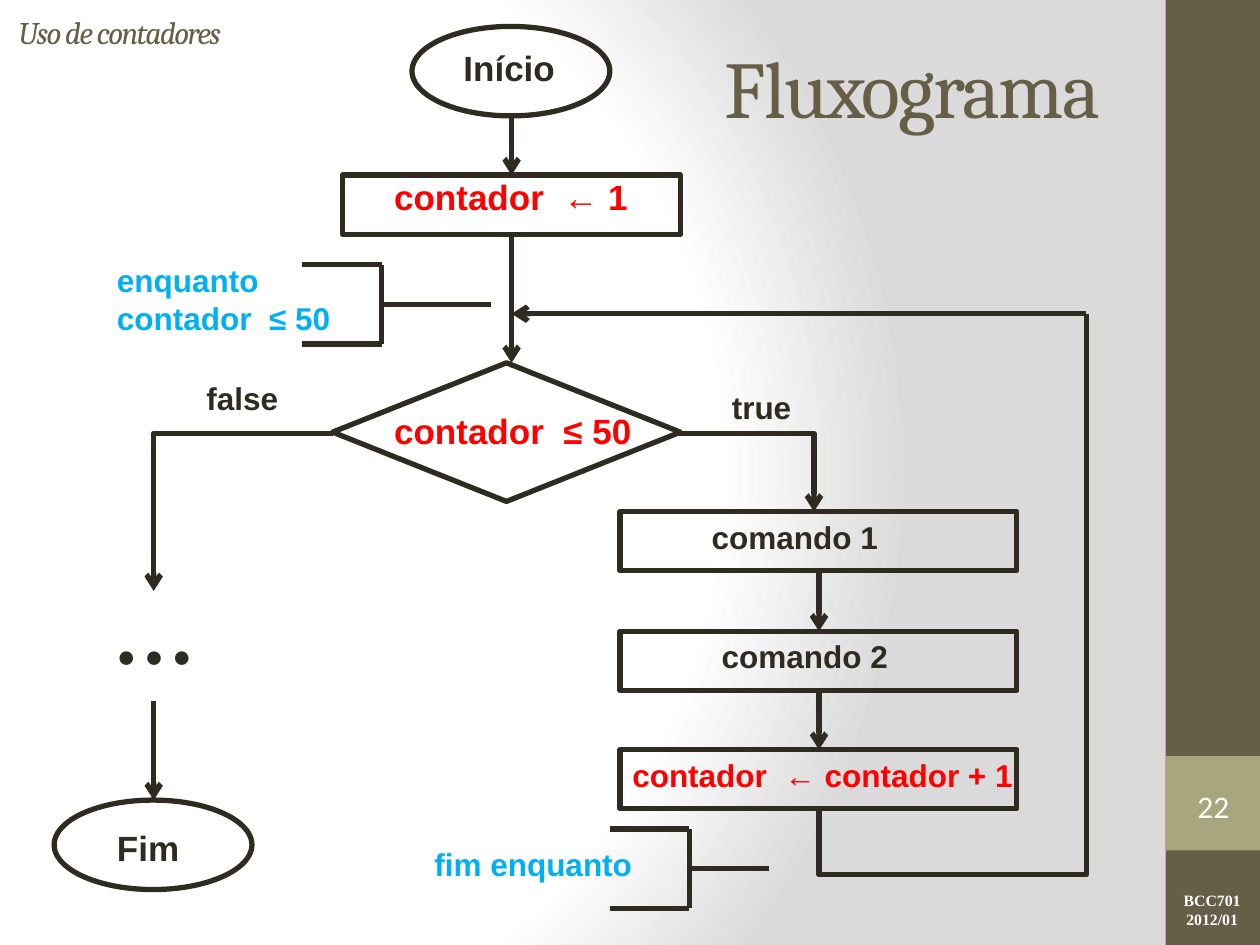
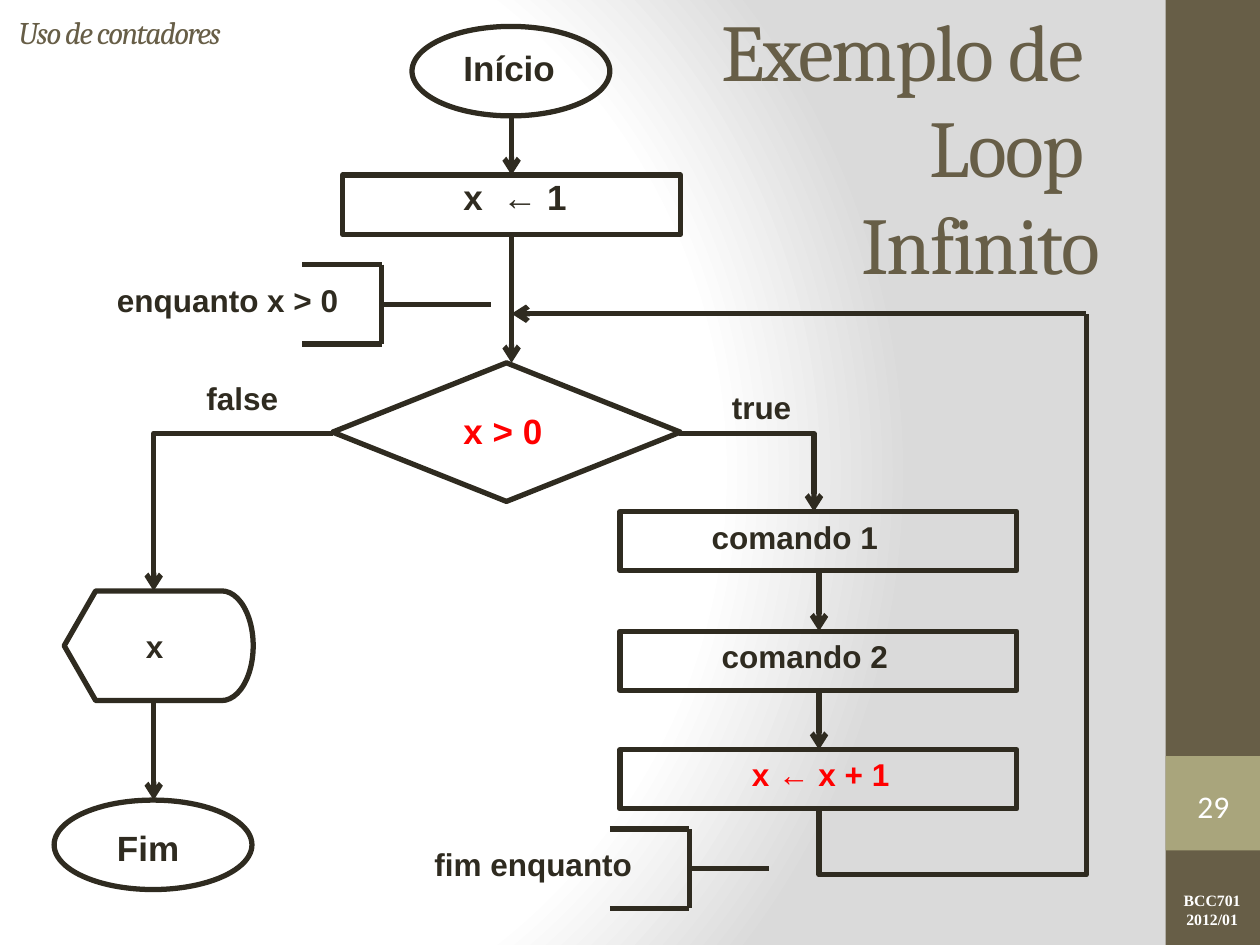
from lxml.etree import SubElement
from pptx import Presentation
from pptx.dml.color import RGBColor
from pptx.enum.shapes import MSO_CONNECTOR, MSO_SHAPE
from pptx.enum.text import MSO_ANCHOR, MSO_AUTO_SIZE, PP_ALIGN
from pptx.oxml.ns import qn
from pptx.util import Inches, Pt

# Shared colours
OLIVE = RGBColor(0x67, 0x5E, 0x47)
SAGE = RGBColor(0xA9, 0xA5, 0x7C)
INK = RGBColor(0x2F, 0x2B, 0x20)
RED = RGBColor(0xFF, 0x00, 0x00)
BLUE = RGBColor(0x00, 0xB0, 0xF0)
WHITE = RGBColor(0xFF, 0xFF, 0xFF)

BACKGROUND_STOPS = [(0, "FFFFFF"), (75, "FFFFFF"), (100, "DADADA")]
BACKGROUND_FOCUS = {"l": 20, "t": 50, "r": 100, "b": 50}

# Flowchart axes and the rows of the loop body
MAIN_X, FALSE_X, BODY_X, RETURN_X = 4.06, 1.22, 6.5, 8.62
DECISION_Y, RETURN_Y = 3.44, 2.49
BODY_TOPS = [4.06, 5.01, 5.95]
BOX_HEIGHT = 0.47


def write_text(frame, text, size=18, font="Arial", color=INK, bold=False,
               italic=False, align=PP_ALIGN.LEFT, anchor=MSO_ANCHOR.TOP,
               spacing=None):
    """Fill a text frame; newlines part paragraphs, \\v breaks a line."""
    frame.text = text
    frame.word_wrap = True
    frame.auto_size = MSO_AUTO_SIZE.NONE
    frame.vertical_anchor = anchor
    for para in frame.paragraphs:
        para.alignment = align
        for span in para.runs:
            span.font.size = Pt(size)
            span.font.name = font
            span.font.color.rgb = color
            span.font.bold = bold
            span.font.italic = italic
            if spacing is not None:
                span.font._element.set("spc", str(int(spacing * 100)))


def add_label(page, text, left, top, width, height=0.4, **text_format):
    box = page.shapes.add_textbox(
        Inches(left), Inches(top), Inches(width), Inches(height))
    write_text(box.text_frame, text, **text_format)
    return box


def add_bold(page, text, left, top, width, **text_format):
    return add_label(page, text, left, top, width, bold=True, **text_format)


def add_symbol(page, kind, left, top, width, height, fill=None):
    """Add a filled band, or an outlined flowchart symbol without fill."""
    symbol = page.shapes.add_shape(
        kind, Inches(left), Inches(top), Inches(width), Inches(height))
    symbol.shadow.inherit = False
    if fill is None:
        symbol.fill.background()
        symbol.line.color.rgb = INK
        symbol.line.width = Pt(3)
    else:
        symbol.fill.solid()
        symbol.fill.fore_color.rgb = fill
        symbol.line.fill.background()
    return symbol


def add_link(page, start, end, arrow=False, kind=MSO_CONNECTOR.STRAIGHT):
    link = page.shapes.add_connector(
        kind, *[Inches(value) for value in (*start, *end)])
    link.line.color.rgb = INK
    link.line.width = Pt(3)
    properties = link._element.spPr
    if arrow:
        SubElement(properties.find(qn("a:ln")), qn("a:tailEnd"), type="arrow")
    SubElement(properties, qn("a:effectLst"))
    return link


def add_elbow(page, start, end, arrow=False, bend=None, turned=False):
    """Add a bent link: one corner without bend, else two corners."""
    if turned:
        # Place the ends as they lie before a quarter turn clockwise
        middle_x, middle_y = (start[0] + end[0]) / 2, (start[1] + end[1]) / 2
        start, end = [(middle_x + y - middle_y, middle_y - x + middle_x)
                      for x, y in (start, end)]
    link = add_link(page, start, end, arrow, MSO_CONNECTOR.ELBOW)
    properties = link._element.spPr
    geometry = properties.find(qn("a:prstGeom"))
    if bend is None:
        geometry.set("prst", "bentConnector2")
    else:
        SubElement(geometry.find(qn("a:avLst")), qn("a:gd"),
                   name="adj1", fmla=f"val {round(bend * 100000)}")
    if turned:
        properties.find(qn("a:xfrm")).set("rot", "5400000")


def add_bracket(page, right, top, stem):
    """Add a right-hand bracket with a stem from its middle."""
    left, bottom, middle = right - 0.63, top + 0.63, top + 0.315
    add_link(page, (left, top), (right, top))
    add_link(page, (right, top), (right, bottom))
    add_link(page, (left, bottom), (right, bottom))
    add_link(page, (right, middle), (right + stem, middle))


def paint_background(master):
    fill = master.background.fill
    fill.gradient()
    gradient = fill._fill._gradFill
    for child in list(gradient):
        gradient.remove(child)
    stops = SubElement(gradient, qn("a:gsLst"))
    for position, color in BACKGROUND_STOPS:
        stop = SubElement(stops, qn("a:gs"), pos=str(position * 1000))
        SubElement(stop, qn("a:srgbClr"), val=color)
    shade = SubElement(gradient, qn("a:path"))
    shade.set("path", "circle")
    SubElement(shade, qn("a:fillToRect"),
               {side: str(part * 1000)
                for side, part in BACKGROUND_FOCUS.items()})


def add_page(deck, title, top, height, number):
    """Add a page with its side band, title, topic, number and footer."""
    page = deck.slides.add_slide(deck.slide_layouts[5])
    add_symbol(page, MSO_SHAPE.RECTANGLE, 9.25, 0, 0.75, 7.5, OLIVE)
    add_symbol(page, MSO_SHAPE.RECTANGLE, 9.25, 6, 0.75, 0.75, SAGE)
    add_bold(page, "BCC701\n2012/01", 9.26, 7.02, 0.72, size=9,
             font="Times New Roman", color=WHITE, align=PP_ALIGN.CENTER)
    heading = page.shapes.title
    heading.left, heading.top = Inches(0.5), Inches(top)
    heading.width, heading.height = Inches(8.33), Inches(height)
    write_text(heading.text_frame, title, size=46, font="Cambria", color=OLIVE,
               align=PP_ALIGN.RIGHT, anchor=MSO_ANCHOR.MIDDLE, spacing=-1)
    add_label(page, "Uso de contadores", 0.05, 0.08, 8.32, 0.34,
              font="Cambria", color=OLIVE, italic=True,
              anchor=MSO_ANCHOR.MIDDLE, spacing=-1)
    add_label(page, number, 9.28, 6.18, 0.7, 0.43, font="Calibri", color=WHITE,
              align=PP_ALIGN.CENTER, anchor=MSO_ANCHOR.MIDDLE)
    return page


def add_loop_chart(page):
    """Draw the symbols, links and labels that both flowcharts share."""
    # Symbols
    for left, top in [(3.27, 0.21), (0.43, 6.35)]:
        add_symbol(page, MSO_SHAPE.OVAL, left, top, 1.57, 0.71)
    add_symbol(page, MSO_SHAPE.RECTANGLE, 2.72, 1.39, 2.68, BOX_HEIGHT)
    add_symbol(page, MSO_SHAPE.DIAMOND, 2.64, 2.88, 2.76, 1.1)
    for top in BODY_TOPS:
        add_symbol(page, MSO_SHAPE.RECTANGLE, 4.92, top, 3.15, BOX_HEIGHT)

    # Straight arrows
    for x, top, bottom in [(MAIN_X, 0.92, 1.39), (MAIN_X, 1.86, 2.88),
                           (FALSE_X, 5.56, 6.35)]:
        add_link(page, (x, top), (x, bottom), arrow=True)
    for above, below in zip(BODY_TOPS, BODY_TOPS[1:]):
        add_link(page, (BODY_X, above + BOX_HEIGHT), (BODY_X, below), arrow=True)

    # Branches and the way back to the test
    add_elbow(page, (5.39, DECISION_Y), (6.46, BODY_TOPS[0]), arrow=True)
    add_elbow(page, (2.64, DECISION_Y), (FALSE_X, 4.69), arrow=True, bend=1)
    add_elbow(page, (BODY_X, 6.43), (RETURN_X, RETURN_Y),
              bend=-0.13, turned=True)
    add_link(page, (RETURN_X, RETURN_Y), (MAIN_X, RETURN_Y), arrow=True)

    # Comment brackets
    add_bracket(page, 3.03, 2.1, 0.87)
    add_bracket(page, 5.47, 6.58, 0.63)

    # Labels
    add_bold(page, "Início", 3.58, 0.32, 1.02, size=20)
    add_bold(page, "Fim", 0.83, 6.51, 0.87, size=20)
    add_bold(page, "true", 5.71, 3.03, 0.87)
    add_bold(page, "false", 1.54, 2.96, 0.87)
    add_bold(page, "comando 1", 5.55, BODY_TOPS[0], 1.81)
    add_bold(page, "comando 2", 5.63, BODY_TOPS[1], 1.73)


def add_counter_page(deck):
    page = add_page(deck, "Fluxograma", 0.3, 0.77, "22")
    add_loop_chart(page)
    add_bold(page, "contador  ← 1", 3.03, 1.34, 2.13, size=20, color=RED)
    add_bold(page, "contador  ≤ 50", 3.03, 3.2, 2.13, size=20, color=RED)
    add_bold(page, "contador  ← contador + 1", 4.92, 5.95, 3.31, color=RED)
    add_bold(page, "enquanto\ncontador  ≤ 50", 0.83, 2.02, 2.13,
             height=0.71, color=BLUE)
    add_bold(page, "fim enquanto", 3.35, 6.66, 2.13, color=BLUE)
    add_label(page, "● ● ●", 0.83, 5, 0.87)


def add_infinite_page(deck):
    page = add_page(deck, "Exemplo de \vLoop \vInfinito", 0.53, 1.25, "29")
    add_loop_chart(page)
    add_bold(page, "x  ← 1", 3.58, 1.34, 1.1, size=20)
    add_bold(page, "x > 0", 3.58, 3.2, 0.87, size=20, color=RED)
    add_bold(page, "x ← x + 1", 5.87, 5.94, 1.34, color=RED)
    add_bold(page, "enquanto x > 0", 0.83, 2.18, 2.13)
    add_bold(page, "fim enquanto", 3.35, 6.66, 2.13)
    add_symbol(page, MSO_SHAPE.FLOWCHART_DISPLAY, 0.51, 4.69, 1.5, 0.87)
    add_bold(page, "x", 1.06, 4.93, 0.31)


def main():
    deck = Presentation()
    deck.slide_width, deck.slide_height = Inches(10), Inches(7.5)
    paint_background(deck.slide_master)
    add_counter_page(deck)
    add_infinite_page(deck)
    deck.save("out.pptx")


if __name__ == "__main__":
    main()
